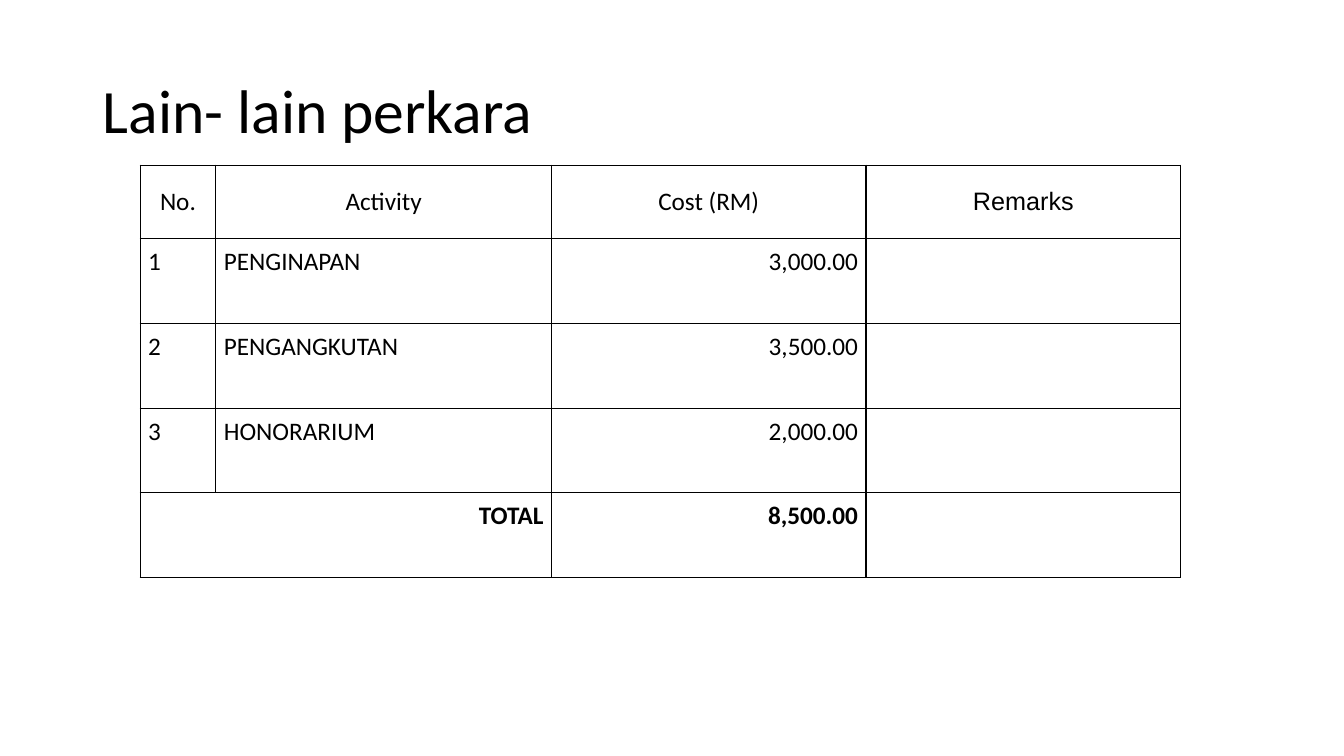
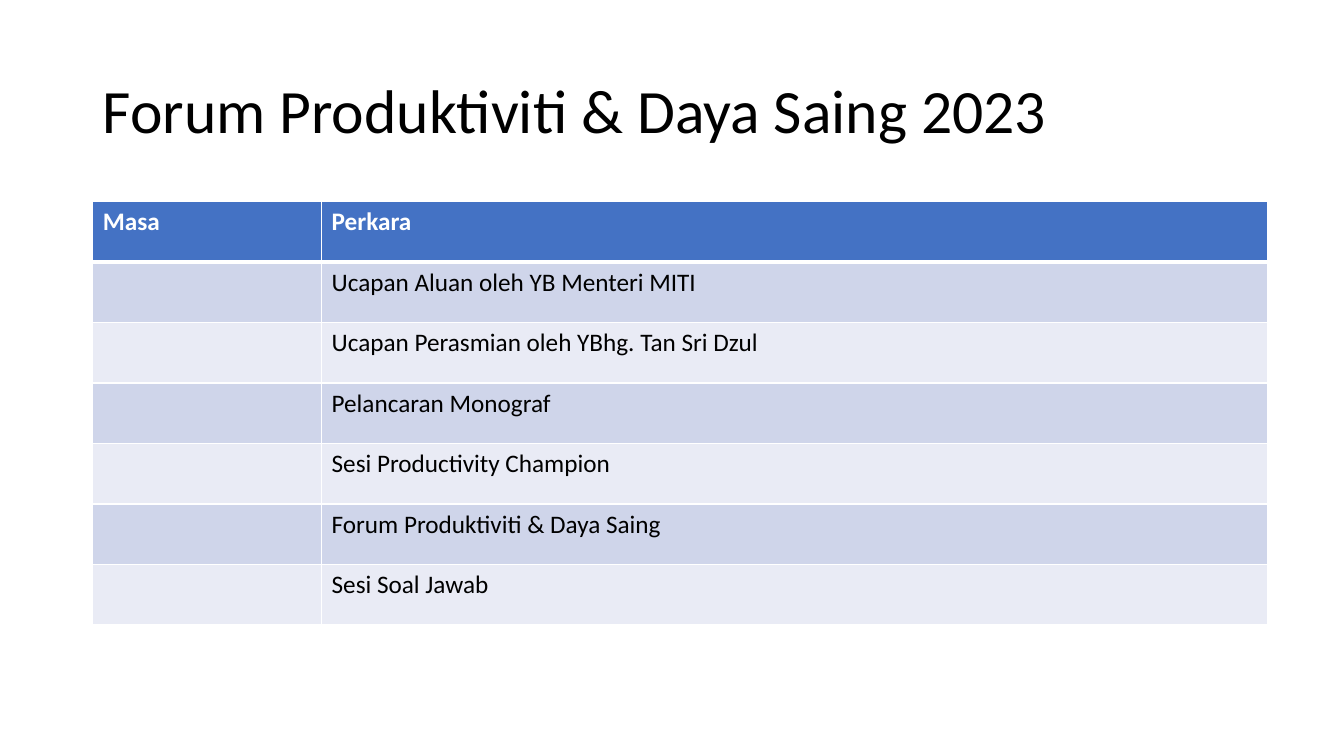
"""Build two slides: a cost table and a forum programme."""
from lxml.etree import SubElement
from pptx import Presentation
from pptx.dml.color import RGBColor
from pptx.enum.text import MSO_ANCHOR, PP_ALIGN
from pptx.oxml.ns import qn
from pptx.util import Pt

PX = 9144
SIZE = (1333, 750)
TITLE = (92, 40, 1150, 145)
FONT = "Calibri"
BLACK = RGBColor(0x00, 0x00, 0x00)
WHITE = RGBColor(0xFF, 0xFF, 0xFF)
BLUE = RGBColor(0x44, 0x72, 0xC4)
BANDS = (RGBColor(0xE9, 0xEB, 0xF5), RGBColor(0xCF, 0xD5, 0xEA))
LEFT, MID, RIGHT = PP_ALIGN.LEFT, PP_ALIGN.CENTER, PP_ALIGN.RIGHT

COSTS = {
    "title": "Lain- lain perkara",
    "at": (139, 164),
    "cols": (75, 333, 312, 312),
    "rows": (73, 84, 84, 84, 84),
    "cells": [
        ("No.", "Activity", "Cost (RM)", "Remarks"),
        ("1", "PENGINAPAN", "3,000.00", ""),
        ("2", "PENGANGKUTAN", "3,500.00", ""),
        ("3", "HONORARIUM", "2,000.00", ""),
        ("TOTAL", "", "8,500.00", ""),
    ],
}
FORUM = {
    "title": "Forum Produktiviti & Daya Saing 2023",
    "at": (92, 200),
    "cols": (227, 938),
    "rows": (60,) * 7,
    "cells": [
        ("Masa", "Perkara"),
        ("", "Ucapan Aluan oleh YB Menteri MITI"),
        ("", "Ucapan Perasmian oleh YBhg. Tan Sri Dzul"),
        ("", "Pelancaran Monograf"),
        ("", "Sesi Productivity Champion"),
        ("", "Forum Produktiviti & Daya Saing"),
        ("", "Sesi Soal Jawab"),
    ],
}


def style(para, size, color=BLACK, bold=False, align=LEFT, name=FONT):
    para.alignment = align
    font = para.font
    font.name, font.size, font.bold = name, Pt(size), bold
    font.color.rgb = color


def edge(cell, color, **widths):
    props = cell._tc.get_or_add_tcPr()
    for side in "LRTB":
        line = SubElement(props, qn(f"a:ln{side}"), w=str(Pt(widths.get(side, 1))))
        fill = SubElement(line, qn("a:solidFill"))
        SubElement(fill, qn("a:srgbClr"), val=str(color))


def inset(cell, wide, high):
    cell.margin_left = cell.margin_right = wide * PX
    cell.margin_top = cell.margin_bottom = high * PX


def add_page(deck, data):
    page = deck.slides.add_slide(deck.slide_layouts.get_by_name("Title Only"))
    title = page.shapes.title
    title.left, title.top, title.width, title.height = (n * PX for n in TITLE)
    frame = title.text_frame
    frame.text = data["title"]
    frame.vertical_anchor = MSO_ANCHOR.MIDDLE
    para = frame.paragraphs[0]
    para.line_spacing = 0.9
    style(para, 44)

    cols, rows = data["cols"], data["rows"]
    box = (*data["at"], sum(cols), sum(rows))
    table = page.shapes.add_table(len(rows), len(cols), *(n * PX for n in box)).table
    table.first_row = table.horz_banding = False
    for col, wide in zip(table.columns, cols):
        col.width = wide * PX
    for row, high in zip(table.rows, rows):
        row.height = high * PX
    for r, line in enumerate(data["cells"]):
        for c, text in enumerate(line):
            table.cell(r, c).text = text
    return table


def walk(table):
    for r, row in enumerate(table.rows):
        for c, cell in enumerate(row.cells):
            yield r, c, cell, cell.text_frame.paragraphs[0]


def add_costs(deck):
    table = add_page(deck, COSTS)
    last = len(COSTS["rows"]) - 1
    for r, c, cell, para in walk(table):
        edge(cell, BLACK)
        cell.fill.background()
        if r == 0:
            inset(cell, 6, 0)
            cell.vertical_anchor = MSO_ANCHOR.MIDDLE
            style(para, 18, align=MID, name="Arial" if c == 3 else FONT)
        else:
            inset(cell, 8, 8)
            style(para, 18, bold=r == last,
                  align=RIGHT if c == 2 or r == last else LEFT)
    table.cell(last, 0).merge(table.cell(last, 1))


def add_forum(deck):
    for r, c, cell, para in walk(add_page(deck, FORUM)):
        head = r == 0
        edge(cell, WHITE, T=3 if r == 1 else 1, B=3 if head else 1)
        cell.fill.solid()
        cell.fill.fore_color.rgb = BLUE if head else BANDS[r % 2]
        style(para, 18, WHITE if head else BLACK, bold=head)


def main():
    deck = Presentation()
    deck.slide_width, deck.slide_height = (n * PX for n in SIZE)
    add_costs(deck)
    add_forum(deck)
    deck.save("out.pptx")


if __name__ == "__main__":
    main()
